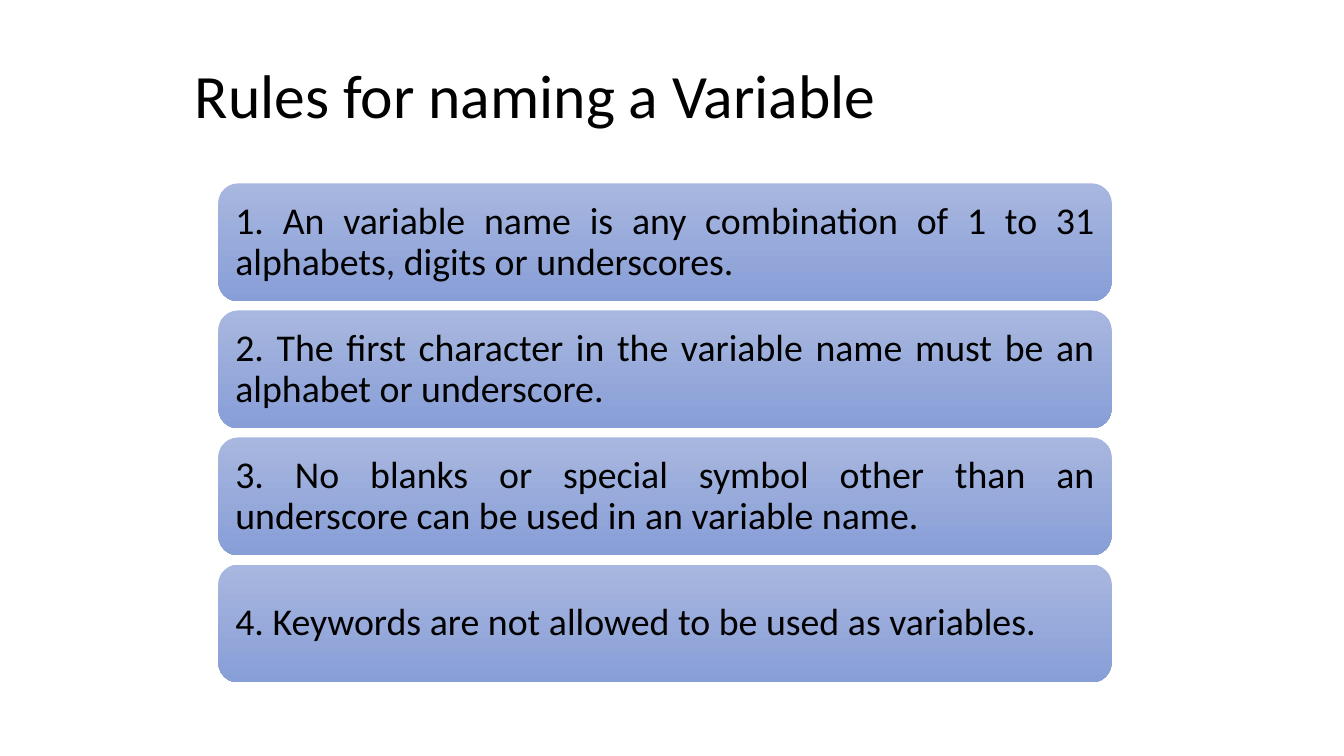
from pptx import Presentation
from pptx.dml.color import RGBColor
from pptx.enum.shapes import MSO_SHAPE as Shape
from pptx.enum.text import MSO_ANCHOR as Anchor, PP_ALIGN as Align
from pptx.util import Pt

FONT = "Calibri"
BLACK = "000000"
GRADIENT = ("A8B7DF", "889ED7")
RULES = (
    "1. An variable name is any combination of 1 to 31 alphabets, digits or underscores. ",
    "2. The first character in the variable name must be an alphabet or underscore. ",
    "3. No blanks or special symbol other than an underscore can be used in an variable name. ",
    "4. Keywords are not allowed to be used as variables.",
)


def color(value):
    return RGBColor.from_string(value)


def write_text(shape, text, size, alignment):
    frame = shape.text_frame
    frame.text = text
    frame.word_wrap = True
    frame.vertical_anchor = Anchor.MIDDLE
    paragraph = frame.paragraphs[0]
    paragraph.alignment = alignment
    paragraph.line_spacing = 0.9
    paragraph.font.name = FONT
    paragraph.font.size = Pt(size)
    paragraph.font.color.rgb = color(BLACK)
    return frame


def place_title(slide, left, top, width, height):
    title = slide.shapes.title
    title.left, title.top = Pt(left), Pt(top)
    title.width, title.height = Pt(width), Pt(height)
    write_text(title, "Rules for naming a Variable", 44, Align.LEFT)


def place_rules(slide, left, top, width, height, gap=6.5):
    rule_height = (height - gap * (len(RULES) - 1)) / len(RULES)
    for index, rule in enumerate(RULES):
        rule_top = top + index * (rule_height + gap)
        shape = slide.shapes.add_shape(
            Shape.ROUNDED_RECTANGLE, Pt(left), Pt(rule_top), Pt(width), Pt(rule_height)
        )
        shape.shadow.inherit = False
        shape.line.fill.background()
        shape.fill.gradient()
        shape.fill.gradient_angle = 270
        for stop, value, position in zip(shape.fill.gradient_stops, GRADIENT, (0, 1)):
            stop.color.rgb = color(value)
            stop.position = position
        frame = write_text(shape, rule, 27, Align.JUSTIFY)
        frame.margin_left = frame.margin_right = Pt(8)
        frame.margin_top = frame.margin_bottom = Pt(8)


def main():
    presentation = Presentation()
    presentation.slide_width, presentation.slide_height = Pt(960), Pt(540)
    slide = presentation.slides.add_slide(presentation.slide_layouts[5])
    place_title(slide, 132, 30, 638, 81)
    place_rules(slide, 156, 131, 638, 356.5)
    presentation.save("out.pptx")


if __name__ == "__main__":
    main()
